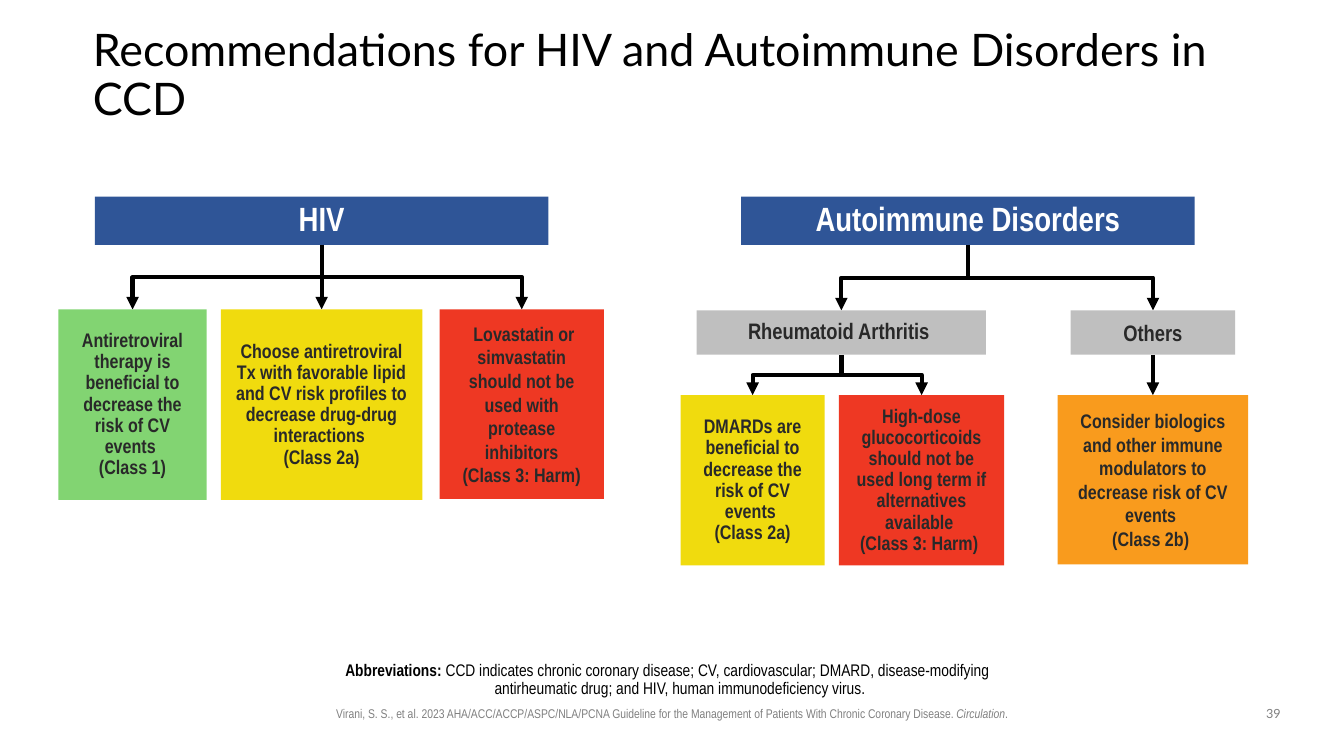
from dataclasses import dataclass

from lxml import etree
from pptx import Presentation
from pptx.dml.color import RGBColor
from pptx.enum.shapes import MSO_CONNECTOR, MSO_SHAPE
from pptx.enum.text import MSO_ANCHOR, MSO_AUTO_SIZE, PP_ALIGN
from pptx.oxml.ns import qn
from pptx.util import Inches, Pt

RECT = MSO_SHAPE.RECTANGLE
STRAIGHT, ELBOW = MSO_CONNECTOR.STRAIGHT, MSO_CONNECTOR.ELBOW
LEFT, CENTER = PP_ALIGN.LEFT, PP_ALIGN.CENTER
MIDDLE, TOP = MSO_ANCHOR.MIDDLE, MSO_ANCHOR.TOP
NO_FIT = MSO_AUTO_SIZE.NONE

COLORS = {
    "black": "000000", "white": "FFFFFF", "ink": "292929", "muted": "808080",
    "blue": "2F5597", "gray": "BFBFBF", "green": "82D472", "yellow": "F0DB0E",
    "red": "EE3823", "orange": "F99B1D",
}
NARROW = "Arial Narrow"
HEADING = {"size": Pt(24), "name": NARROW, "bold": True, "color": "white"}
GROUP = {"size": Pt(16), "name": NARROW, "bold": True, "color": "ink"}
ADVICE = {"size": Pt(14), "name": NARROW, "bold": True, "color": "ink"}
TITLE = {"size": Pt(32), "name": "Lato", "bold": False, "color": "black"}
NOTE = {"size": Pt(12), "name": NARROW, "bold": False, "color": "black"}
CITATION = {"size": Pt(9), "name": NARROW, "color": "muted"}
NUMBER = {"size": Pt(9), "name": "Lato", "color": "muted"}


@dataclass
class Box:
    text: str
    fill: str
    font: dict
    left: float
    top: float
    width: float
    height: float
    spacing: float = 0.9
    children: tuple["Box", ...] = ()

    @property
    def center(self) -> float:
        return self.left + self.width / 2

    @property
    def bottom(self) -> float:
        return self.top + self.height


HIV = Box("HIV", "blue", HEADING, 0.94, 1.95, 4.5, 0.48, children=(
    Box("Antiretroviral therapy is beneficial to decrease the risk of CV events \v(Class 1)",
        "green", ADVICE, 0.58, 3.07, 1.47, 1.89),
    Box("Choose antiretroviral Tx with favorable lipid and CV risk profiles to decrease "
        "drug-drug interactions \n(Class 2a)",
        "yellow", ADVICE, 2.19, 3.07, 2, 1.89),
    Box(" Lovastatin or simvastatin should not be used with protease inhibitors"
        "\n(Class 3: Harm)",
        "red", ADVICE, 4.36, 3.07, 1.63, 1.88, spacing=1),
))
ARTHRITIS = Box("Rheumatoid Arthritis ", "gray", GROUP, 6.91, 3.08, 2.87, 0.44, children=(
    Box("DMARDs are beneficial to decrease the risk of CV events \v(Class 2a)",
        "yellow", ADVICE, 6.75, 3.92, 1.43, 1.69),
    Box("High-dose glucocorticoids should not be used long term if alternatives "
        "available \v(Class 3: Harm) ",
        "red", ADVICE, 8.32, 3.92, 1.64, 1.69),
))
OTHERS = Box("Others", "gray", GROUP, 10.62, 3.08, 1.63, 0.44, spacing=1, children=(
    Box("Consider biologics and other immune modulators to decrease risk of CV events "
        "\n(Class 2b) ",
        "orange", ADVICE, 10.49, 3.92, 1.89, 1.68, spacing=1),
))
AUTOIMMUNE = Box("Autoimmune Disorders", "blue", HEADING, 7.35, 1.95, 4.5, 0.48,
                 children=(ARTHRITIS, OTHERS))


def rgb(name: str) -> RGBColor:
    return RGBColor.from_string(COLORS[name])


def format_run(r, font: dict) -> None:
    for key, value in font.items():
        if key == "color":
            r.font.color.rgb = rgb(value)
        else:
            setattr(r.font, key, value)


def add_runs(p, runs: list[tuple[str, dict]]) -> None:
    for text, font in runs:
        r = p.add_run()
        r.text = text
        format_run(r, font)


def set_frame(tf, anchor, margins: tuple[float, ...] = (0.1, 0.05, 0.1, 0.05)) -> None:
    """Set wrapping, anchor and the left, top, right and bottom margins."""
    tf.word_wrap = True
    tf.auto_size = NO_FIT
    tf.vertical_anchor = anchor
    for side, margin in zip(("left", "top", "right", "bottom"), margins):
        setattr(tf, f"margin_{side}", Inches(margin))


def place(sp, left: float, top: float, width: float, height: float) -> None:
    sp.left, sp.top = Inches(left), Inches(top)
    sp.width, sp.height = Inches(width), Inches(height)


def add_box(s, box: Box) -> None:
    sp = s.shapes.add_shape(RECT, *map(Inches, (box.left, box.top, box.width, box.height)))
    sp.shadow.inherit = False
    sp.fill.solid()
    sp.fill.fore_color.rgb = rgb(box.fill)
    sp.line.fill.background()
    tf = sp.text_frame
    set_frame(tf, MIDDLE, (0, 0, 0, 0) if box.font is HEADING else (0.1, 0.05, 0.1, 0.05))
    tf.text = box.text
    for p in tf.paragraphs:
        p.alignment = CENTER
        p.line_spacing = box.spacing
        for r in p.runs:
            format_run(r, box.font)


def add_arrow(s, parent: Box, child: Box) -> None:
    """Join the parent's bottom to the child's top, leaving and arriving vertically."""
    x1, y1, x2, y2 = parent.center, parent.bottom, child.center, child.top
    if abs(x2 - x1) < 0.01:
        cxn = s.shapes.add_connector(STRAIGHT, *map(Inches, (x1, y1, x1, y2)))
    else:
        # An elbow starts out horizontally, so it is laid on its side and turned.
        run, drop = abs(x2 - x1), y2 - y1
        left, top = (x1 + x2 - drop) / 2, (y1 + y2 - run) / 2
        ends, angle = (left, left + drop), 90
        if x2 > x1:
            ends, angle = (left + drop, left), 270
        cxn = s.shapes.add_connector(
            ELBOW, *map(Inches, (ends[0], top, ends[1], top + run)))
        cxn._element.spPr.find(qn("a:xfrm")).set("rot", str(angle * 60000))
    cxn.line.color.rgb = rgb("black")
    cxn.line.width = Pt(3)
    etree.SubElement(cxn.line._get_or_add_ln(), qn("a:tailEnd"), type="triangle")
    etree.SubElement(cxn._element.spPr, qn("a:effectLst"))


def add_tree(s, box: Box) -> None:
    add_box(s, box)
    for child in box.children:
        add_arrow(s, box, child)
        add_tree(s, child)


def add_label(s, at: tuple[float, ...], runs: list[tuple[str, dict]]) -> None:
    tf = s.shapes.add_textbox(*map(Inches, at)).text_frame
    set_frame(tf, TOP)
    p = tf.paragraphs[0]
    p.alignment = CENTER
    add_runs(p, runs)


def fill_title(sp) -> None:
    place(sp, 0.92, 0.4, 11.5, 0.72)
    set_frame(sp.text_frame, MIDDLE, (0, 0, 0, 0))
    p = sp.text_frame.paragraphs[0]
    p.alignment = LEFT
    p.line_spacing = 0.9
    add_runs(p, [("Recommendations for HIV and Autoimmune Disorders in CCD", TITLE)])


def fill_abbreviations(sp) -> None:
    place(sp, 3.2, 6.52, 6.94, 0.42)
    set_frame(sp.text_frame, TOP, (0, 0.05, 0.1, 0.05))
    p = sp.text_frame.paragraphs[0]
    pPr = p._p.get_or_add_pPr()
    pPr.set("marL", str(Inches(0.25)))
    pPr.set("indent", str(Inches(-0.25)))
    etree.SubElement(pPr, qn("a:buNone"))
    p.alignment = CENTER
    p.line_spacing = 0.9
    p.space_before = Pt(0)
    add_runs(p, [
        ("Abbreviations: ", NOTE | {"bold": True}),
        ("CCD indicates chronic coronary disease; CV, cardiovascular; DMARD, "
         "disease-modifying antirheumatic drug; and HIV, human immunodeficiency virus.", NOTE),
    ])


def main() -> None:
    prs = Presentation()
    prs.slide_width, prs.slide_height = Inches(13.33), Inches(7.5)
    s = prs.slides.add_slide(prs.slide_layouts[1])
    fill_title(s.shapes.title)
    fill_abbreviations(s.placeholders[1])
    for tree in (HIV, AUTOIMMUNE):
        add_tree(s, tree)
    add_label(s, (2.94, 6.95, 7.45, 0.25), [
        ("Virani, S. S., et al. 2023 AHA/ACC/ACCP/ASPC/NLA/PCNA Guideline for the "
         "Management of Patients With Chronic Coronary Disease. ", CITATION),
        ("Circulation", CITATION | {"italic": True}),
        (".", CITATION),
    ])
    add_label(s, (12.42, 6.95, 0.42, 0.26), [("39", NUMBER)])
    prs.save("out.pptx")


if __name__ == "__main__":
    main()
